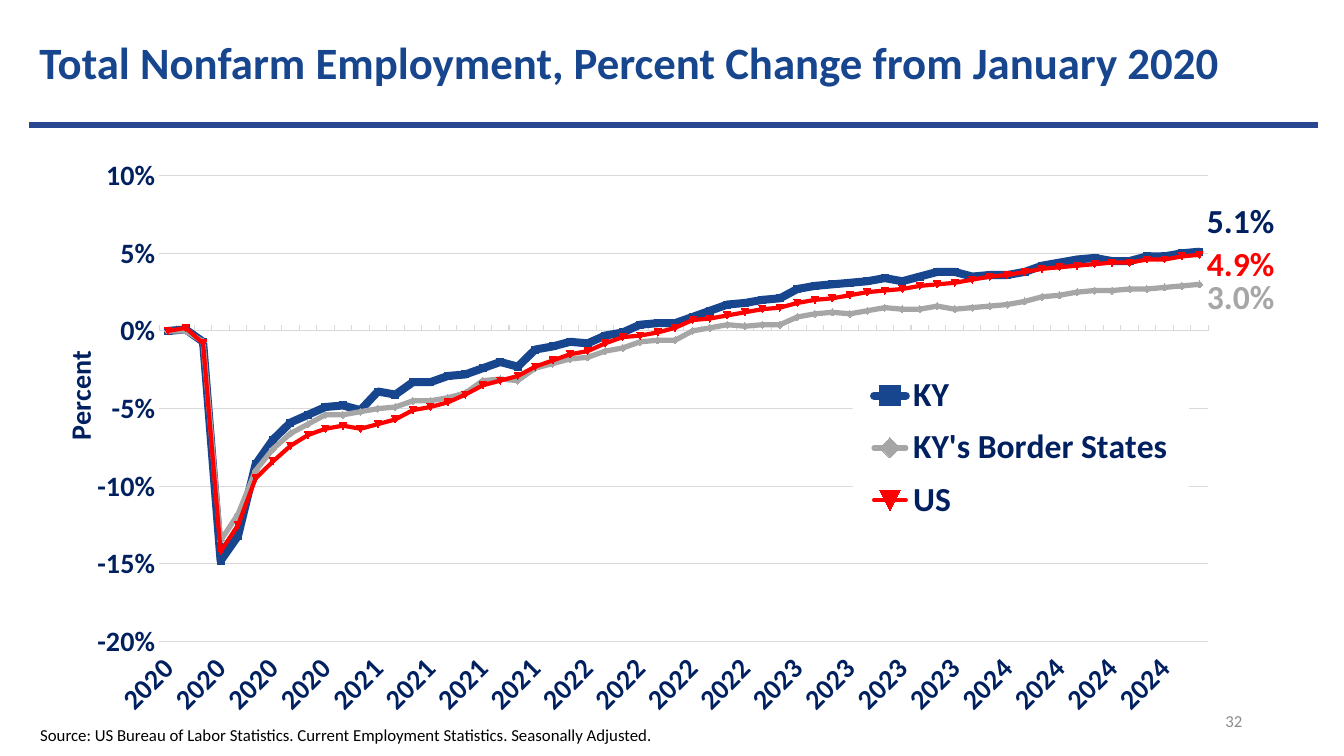
from lxml.etree import SubElement
from pptx import Presentation
from pptx.chart.data import CategoryChartData
from pptx.dml.color import RGBColor
from pptx.enum.chart import XL_CHART_TYPE as Chart, XL_LABEL_POSITION as LabelPos
from pptx.enum.chart import XL_LEGEND_POSITION as LegendPos
from pptx.enum.chart import XL_TICK_LABEL_POSITION as TickLabel, XL_TICK_MARK as Tick
from pptx.enum.shapes import MSO_CONNECTOR as Connector
from pptx.enum.text import MSO_ANCHOR as Anchor, PP_ALIGN as Align
from pptx.oxml import parse_xml
from pptx.oxml.ns import nsdecls, qn
from pptx.util import Inches, Pt

FONT = "Calibri"
COLORS = {"title": "17468E", "rule": "284790", "text": "002060", "grid": "D9D9D9",
          "number": "8C8C8C", "source": "000000", "white": "FFFFFF",
          "KY": "17468E", "KY's Border States": "A6A6A6", "US": "FF0000"}
RGB = {name: RGBColor.from_string(c) for name, c in COLORS.items()}

prs = Presentation()
prs.slide_width, prs.slide_height = Inches(13.33), Inches(7.5)
s = prs.slides.add_slide(prs.slide_layouts[5])


def box(x, y, w, h):
    """Percent of the slide to left, top, width, height."""
    return [int(v * side / 100) for v, side in
            zip((x, y, w, h), (prs.slide_width, prs.slide_height) * 2)]


def place(parent, index, **shares):
    """Manual layout of a chart part, in percent of the chart."""
    for old in parent.findall(qn("c:layout")):
        parent.remove(old)
    layout = parse_xml(f"<c:layout {nsdecls('c')}><c:manualLayout/></c:layout>")
    for tag, value in shares.items():
        val = value if isinstance(value, str) else f"{value / 100:.4f}"
        SubElement(layout[0], qn(f"c:{tag}")).set("val", val)
    parent.insert(index, layout)


# Title
title = s.shapes.title
title.left, title.top, title.width, title.height = box(2.18, 4.93, 95.87, 7.2)
tf = title.text_frame
tf.text = "Total Nonfarm Employment, Percent Change from January 2020"
tf.vertical_anchor = Anchor.MIDDLE
p = tf.paragraphs[0]
p.alignment, p.line_spacing = Align.LEFT, 0.9
font = p.runs[0].font
font.name, font.size, font.bold = FONT, Pt(32), True
font.color.rgb = RGB["title"]

# Rule under the title
x, y, w, h = box(2.18, 16.53, 95.87, 0)
rule = s.shapes.add_connector(Connector.STRAIGHT, x, y, x + w, y)
rule.line.color.rgb, rule.line.width = RGB["rule"], Pt(4.5)
SubElement(rule._element.spPr, qn("a:effectLst"))

# Chart data: monthly change in tenths of a percent
changes = {
    "KY": [0, 1, -7, -148, -132, -86, -70, -59, -54, -49, -48, -51,
           -39, -41, -33, -33, -29, -28, -24, -20, -23, -12, -10, -7,
           -8, -3, -1, 4, 5, 5, 9, 13, 17, 18, 20, 21,
           27, 29, 30, 31, 32, 34, 32, 35, 38, 38, 35, 36,
           36, 38, 42, 44, 46, 47, 45, 45, 48, 48, 50, 51],
    "KY's Border States": [0, 0, -7, -135, -118, -90, -76, -66, -60, -54, -54, -52,
                           -50, -49, -45, -45, -43, -40, -32, -31, -32, -24, -21, -18,
                           -17, -13, -11, -7, -6, -6, 0, 2, 4, 3, 4, 4,
                           9, 11, 12, 11, 13, 15, 14, 14, 16, 14, 15, 16,
                           17, 19, 22, 23, 25, 26, 26, 27, 27, 28, 29, 30],
    "US": [0, 2, -8, -142, -125, -95, -84, -74, -67, -63, -61, -63,
           -60, -57, -51, -49, -46, -41, -35, -32, -29, -23, -19, -15,
           -13, -8, -4, -3, -1, 2, 7, 8, 10, 12, 14, 15,
           18, 20, 21, 23, 25, 26, 27, 29, 30, 31, 33, 35,
           36, 38, 40, 41, 42, 43, 44, 44, 46, 46, 48, 49],
}
data = CategoryChartData(number_format="0.0%")
data.categories = [str(2020 + month // 12) for month in range(60)]
for name, tenths in changes.items():
    data.add_series(name, [t / 1000 for t in tenths])

chart = s.shapes.add_chart(Chart.LINE, *box(2.18, 20.4, 95.87, 74.8), data).chart
chart.has_title = False
chart.font.name, chart.font.size, chart.font.bold = FONT, Pt(20), True
chart.font.color.rgb = RGB["text"]
place(chart._chartSpace.chart.plotArea, 0, layoutTarget="inner", xMode="edge",
      yMode="edge", x=10.1, y=3.8, w=81.4, h=82.4)

# Lines, each with a label on its last point
widths = {"KY": 5.75, "KY's Border States": 3.75, "US": 3}
label_shifts = {"KY": -5.1, "KY's Border States": 2.5, "US": 1.8}
chart.plots[0].vary_by_categories = False
for series in chart.plots[0].series:
    name = series.name
    series.smooth = False
    series.marker.style = None
    line = series.format.line
    line.color.rgb, line.width = RGB[name], Pt(widths[name])
    line._get_or_add_ln().set("cap", "rnd")
    label = series.points[59].data_label
    label.position = LabelPos.RIGHT
    font = label.font
    font.name, font.size, font.bold = FONT, Pt(24), True
    font.color.rgb = RGB["text" if name == "KY" else name]
    dLbl = series._element.find(f".//{qn('c:dLbl')}")
    place(dLbl, 1, x=0, y=label_shifts[name])
    dLbl.insert(2, parse_xml(
        f'<c:numFmt {nsdecls("c")} formatCode="0.0%" sourceLinked="0"/>'))

# Axes
years, percent = chart.category_axis, chart.value_axis
for axis in (years, percent):
    font = axis.tick_labels.font
    font.name, font.size, font.bold = FONT, Pt(20), True
    font.color.rgb = RGB["text"]
    axis.minor_tick_mark = Tick.NONE
years.major_tick_mark = Tick.INSIDE
years.tick_label_position = TickLabel.LOW
years.format.line.color.rgb, years.format.line.width = RGB["grid"], Pt(0.75)
years._element.txPr.bodyPr.set("rot", "-2700000")
years._element.find(qn("c:noMultiLvlLbl")).addprevious(
    parse_xml(f'<c:tickLblSkip {nsdecls("c")} val="3"/>'))

percent.minimum_scale, percent.maximum_scale, percent.major_unit = -0.2, 0.1, 0.05
percent.major_tick_mark = Tick.NONE
percent.format.line.fill.background()
percent.tick_labels.number_format = "0%"
percent.tick_labels.number_format_is_linked = False
grid = percent.major_gridlines.format.line
grid.color.rgb, grid.width = RGB["grid"], Pt(0.75)
percent.axis_title.text_frame.text = "Percent"
font = percent.axis_title.text_frame.paragraphs[0].runs[0].font
font.name, font.size, font.bold = FONT, Pt(20), True
font.color.rgb = RGB["text"]
place(percent.axis_title._element, 1, xMode="edge", yMode="edge", x=2.0, y=33.8)

# Legend on a white panel inside the plot
chart.has_legend = True
legend = chart.legend
legend.position, legend.include_in_layout = LegendPos.BOTTOM, False
legend.font.name, legend.font.size, legend.font.bold = FONT, Pt(24), True
legend.font.color.rgb = RGB["text"]
place(legend._element, 1, xMode="edge", yMode="edge", x=63.9, y=37.1, w=26.1, h=29.7)
legend._element.find(qn("c:txPr")).addprevious(parse_xml(
    f'<c:spPr {nsdecls("c", "a")}><a:solidFill><a:srgbClr val="{COLORS["white"]}"/>'
    '</a:solidFill></c:spPr>'))

# Slide number and source
notes = [
    ("32", "number", box(70.67, 92.67, 22.5, 5.33), Align.RIGHT, Anchor.MIDDLE),
    ("Source: US Bureau of Labor Statistics. Current Employment Statistics. "
     "Seasonally Adjusted.", "source", box(2.25, 95.2, 76.14, 4), Align.LEFT, Anchor.TOP),
]
for text, color, area, align, anchor in notes:
    tf = s.shapes.add_textbox(*area).text_frame
    tf.word_wrap, tf.vertical_anchor = True, anchor
    tf.text = text
    p = tf.paragraphs[0]
    p.alignment = align
    font = p.runs[0].font
    font.name, font.size = FONT, Pt(12)
    font.color.rgb = RGB[color]

prs.save("out.pptx")
